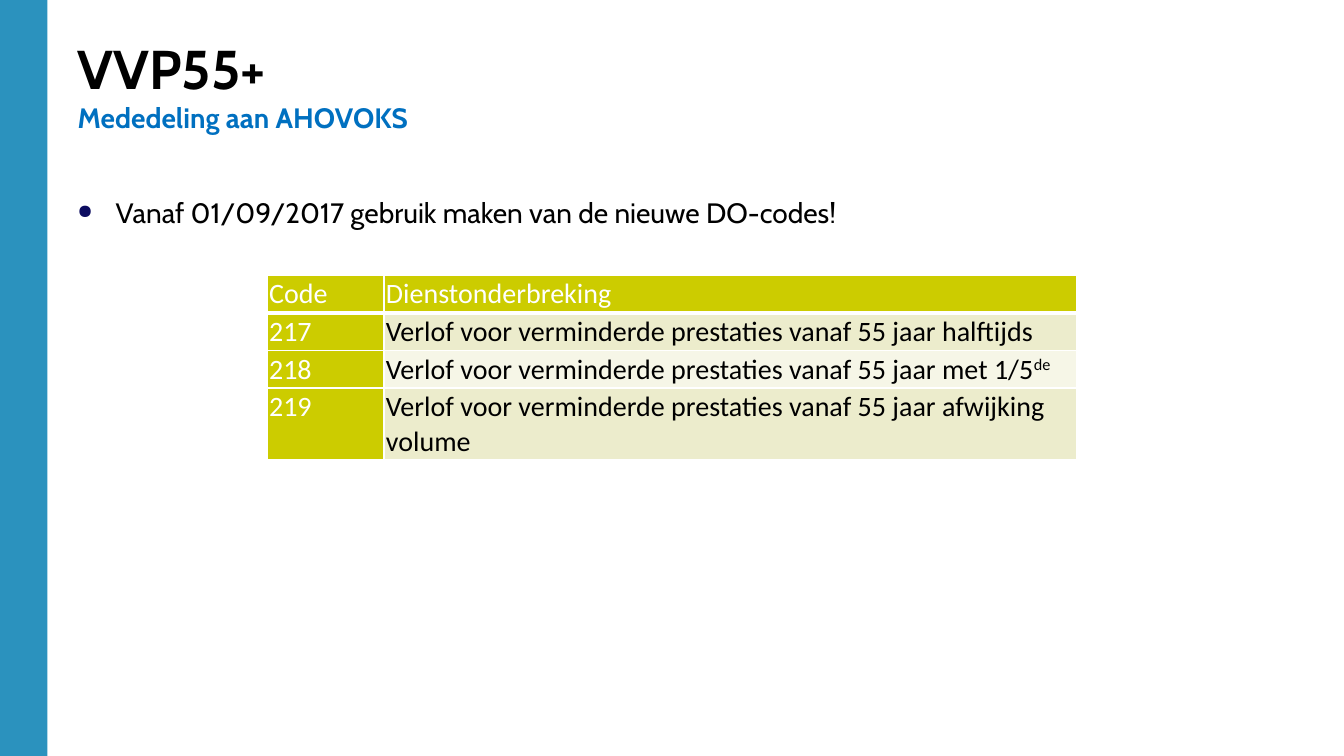
from dataclasses import dataclass
from typing import NamedTuple

from lxml.etree import SubElement
from pptx import Presentation
from pptx.dml.color import RGBColor as Rgb
from pptx.enum.shapes import MSO_SHAPE as Shape
from pptx.enum.text import MSO_ANCHOR as Anchor, MSO_AUTO_SIZE as AutoSize, PP_ALIGN as Align
from pptx.oxml import parse_xml
from pptx.oxml.ns import nsdecls, qn
from pptx.util import Inches, Pt

SLIDE_WIDTH, SLIDE_HEIGHT = Inches(13.33), Inches(7.5)
COLUMNS, ROWS = 40, 30


@dataclass(frozen=True)
class Theme:
    heading_font: str = "Cabin"
    table_font: str = "Calibri"
    title_size: int = 39
    text_size: int = 20
    black: str = "000000"
    white: str = "FFFFFF"
    sidebar: str = "2B92BE"
    subtitle: str = "0070C0"
    bullet: str = "0C0C60"
    header: str = "CCCC00"
    bands: tuple[str, str] = ("ECECCC", "F6F6E7")


class Area(NamedTuple):
    left: float
    top: float
    width: float
    height: float


class LeaveCode(NamedTuple):
    code: str
    meaning: str
    suffix: str = ""


THEME = Theme()
SIDEBAR = Area(0, 0, 1.41, 30)
HEADING = Area(2.01, 0.52, 37.23, 5)
ANNOUNCEMENT = Area(2.01, 7.72, 36, 2)
CODE_TABLE = Area(7.95, 10.92, 24.09, 7.28)
CODE_COLUMNS = (3.48, 20.61)
CODE_ROWS = (1.48, 1.48, 1.48, 2.84)
LEAVE_CODES = (
    LeaveCode("Code", "Dienstonderbreking"),
    LeaveCode("217", "Verlof voor verminderde prestaties vanaf 55 jaar halftijds"),
    LeaveCode("218", "Verlof voor verminderde prestaties vanaf 55 jaar met 1/5", "de"),
    LeaveCode("219", "Verlof voor verminderde prestaties vanaf 55 jaar afwijking volume"),
)


def across(columns: float) -> int:
    return round(SLIDE_WIDTH * columns / COLUMNS)


def down(rows: float) -> int:
    return round(SLIDE_HEIGHT * rows / ROWS)


def place(area: Area) -> tuple[int, int, int, int]:
    return across(area.left), down(area.top), across(area.width), down(area.height)


def write(paragraph, text: str, *, font: str = THEME.heading_font,
          size: int = THEME.text_size, color: str = THEME.black,
          bold: bool = False, raised: int = 0) -> None:
    run = paragraph.add_run()
    run.text = text
    run.font.name, run.font.size, run.font.bold = font, Pt(size), bold
    run.font.color.rgb = Rgb.from_string(color)
    if raised:
        run._r.get_or_add_rPr().set("baseline", str(raised * 1000))


def draw_sidebar(slide) -> None:
    sidebar = slide.shapes.add_shape(Shape.RECTANGLE, *place(SIDEBAR))
    sidebar.shadow.inherit = False
    sidebar.fill.solid()
    sidebar.fill.fore_color.rgb = Rgb.from_string(THEME.sidebar)
    sidebar.line.fill.background()


def draw_heading(slide) -> None:
    heading = slide.shapes.title
    heading.left, heading.top, heading.width, heading.height = place(HEADING)
    frame = heading.text_frame
    frame.auto_size, frame.vertical_anchor = AutoSize.NONE, Anchor.BOTTOM
    lines = frame.paragraphs[0]
    lines.alignment = Align.LEFT
    write(lines, "VVP55+", size=THEME.title_size, bold=True)
    lines.add_line_break()
    write(lines, "Mededeling aan AHOVOKS", color=THEME.subtitle, bold=True)


def add_bullet(paragraph) -> None:
    properties = paragraph._p.get_or_add_pPr()
    indent = Inches(0.38)
    properties.set("marL", str(indent))
    properties.set("indent", str(-indent))
    color = SubElement(properties, qn("a:buClr"))
    SubElement(color, qn("a:srgbClr")).set("val", THEME.bullet)
    SubElement(properties, qn("a:buSzPct")).set("val", "70000")
    SubElement(properties, qn("a:buChar")).set("char", "●")


def draw_announcement(slide) -> None:
    frame = slide.shapes.add_textbox(*place(ANNOUNCEMENT)).text_frame
    frame.word_wrap = True
    announcement = frame.paragraphs[0]
    announcement.line_spacing = 0.9
    add_bullet(announcement)
    write(announcement, "Vanaf 01/09/2017 gebruik maken van de nieuwe DO-codes!")


def style_cell(cell, fill: str, row: int) -> None:
    cell.margin_left = cell.margin_right = Inches(0.02)
    cell.margin_top = cell.margin_bottom = Inches(0.02)
    cell.vertical_anchor = Anchor.TOP if row else Anchor.MIDDLE
    cell.fill.solid()
    cell.fill.fore_color.rgb = Rgb.from_string(fill)
    widths = {"lnL": 1, "lnR": 1, "lnT": 3 if row == 1 else 1, "lnB": 1 if row else 3}
    for position, (side, width) in enumerate(widths.items()):
        border = parse_xml(
            f'<a:{side} {nsdecls("a")} w="{Pt(width)}"><a:solidFill>'
            f'<a:srgbClr val="{THEME.white}"/></a:solidFill></a:{side}>')
        cell._tc.get_or_add_tcPr().insert(position, border)


def draw_code_table(slide) -> None:
    table = slide.shapes.add_table(
        len(CODE_ROWS), len(CODE_COLUMNS), *place(CODE_TABLE)).table
    for column, width in zip(table.columns, CODE_COLUMNS):
        column.width = across(width)
    for row, (height, leave) in enumerate(zip(CODE_ROWS, LEAVE_CODES)):
        table.rows[row].height = down(height)
        for column, text in enumerate((leave.code, leave.meaning)):
            plain = row > 0 and column > 0
            cell = table.cell(row, column)
            style_cell(cell, THEME.bands[(row - 1) % 2] if plain else THEME.header, row)
            entry = cell.text_frame.paragraphs[0]
            color = THEME.black if plain else THEME.white
            write(entry, text, font=THEME.table_font, color=color)
            if plain and leave.suffix:
                write(entry, leave.suffix, font=THEME.table_font, color=color, raised=30)


def main() -> None:
    deck = Presentation()
    deck.slide_width, deck.slide_height = SLIDE_WIDTH, SLIDE_HEIGHT
    slide = deck.slides.add_slide(deck.slide_layouts.get_by_name("Title Only"))
    draw_sidebar(slide)
    draw_heading(slide)
    draw_announcement(slide)
    draw_code_table(slide)
    deck.save("out.pptx")


if __name__ == "__main__":
    main()
